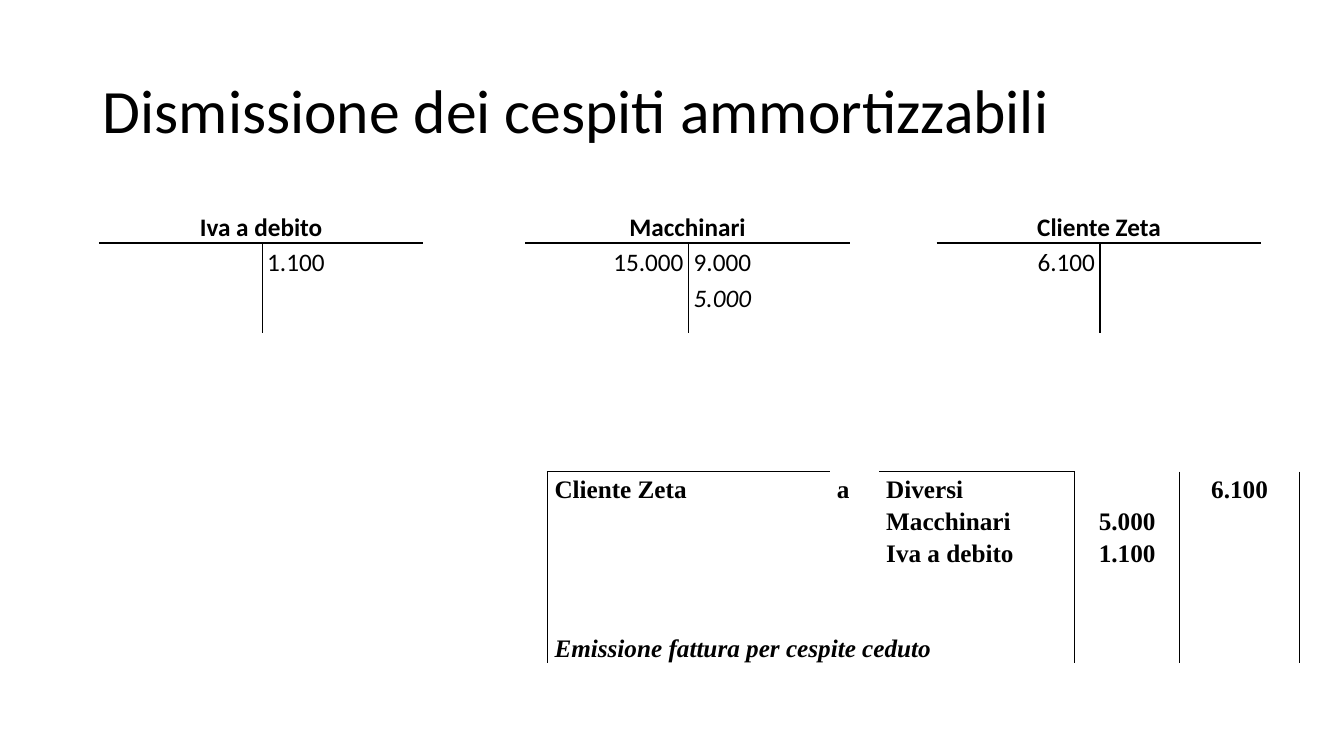
from pptx import Presentation
from pptx.dml.color import RGBColor
from pptx.enum.text import MSO_ANCHOR, PP_ALIGN
from pptx.oxml import parse_xml
from pptx.oxml.ns import nsdecls, qn
from pptx.util import Inches, Pt

BLACK = RGBColor(0x00, 0x00, 0x00)
SANS, SERIF = "Calibri", "Times New Roman"
PLAIN_TABLE = "{2D5ABB26-0587-4C30-8999-92F81FD0307C}"


def write(tf, text, font=SANS, size=18, bold=False, italic=False,
          align=PP_ALIGN.LEFT, spacing=1.15, first=True):
    """Write one paragraph, in the first one or after those already there."""
    p = tf.paragraphs[0] if first else tf.add_paragraph()
    p.alignment, p.line_spacing = align, spacing
    r = p.add_run()
    r.text = text
    r.font.name, r.font.size = font, Pt(size)
    r.font.bold, r.font.italic = bold, italic
    r.font.color.rgb = BLACK


class SlideBuilder:
    def __init__(self, prs):
        self.slide = prs.slides.add_slide(prs.slide_layouts[5])

    def title(self, text):
        sp = self.slide.shapes.title
        sp.left, sp.top = Inches(0.92), Inches(0.4)
        sp.width, sp.height = Inches(11.5), Inches(1.45)
        sp.text_frame.vertical_anchor = MSO_ANCHOR.MIDDLE
        write(sp.text_frame, text, size=44, spacing=0.9)

    def table(self, left, top, cols, rows, inset):
        """Add an unstyled table without fills."""
        table = self.slide.shapes.add_table(
            len(rows), len(cols), Inches(left), Inches(top),
            Inches(sum(cols)), Inches(sum(rows))).table
        table.first_row = table.horz_banding = False
        table._tbl.tblPr.find(qn("a:tableStyleId")).text = PLAIN_TABLE
        for column, width in zip(table.columns, cols):
            column.width = Inches(width)
        for row, height in zip(table.rows, rows):
            row.height = Inches(height)
        for cell in table.iter_cells():
            cell.margin_left = cell.margin_right = Inches(inset)
            cell.margin_top = cell.margin_bottom = 0
            cell.fill.background()
        return table

    def borders(self, cell, sides):
        """Rule the given sides, named in the order L, R, T, B."""
        for i, side in enumerate(sides):
            cell._tc.get_or_add_tcPr().insert(i, parse_xml(
                f'<a:ln{side} {nsdecls("a")} w="{Pt(1)}"><a:solidFill>'
                f'<a:srgbClr val="{BLACK}"/></a:solidFill></a:ln{side}>'))

    def t_account(self, left, name, debits, credits):
        table = self.table(left, 2.06, [1.62, 1.6], [0.33, 0.89], 0.05)
        header = table.cell(0, 0)
        header.merge(table.cell(0, 1))
        write(header.text_frame, name, bold=True, align=PP_ALIGN.CENTER)
        sides = [(debits, PP_ALIGN.RIGHT, "RT"), (credits, PP_ALIGN.LEFT, "LT")]
        for col, (amounts, align, ruled) in enumerate(sides):
            cell = table.cell(1, col)
            self.borders(cell, ruled)
            for i, amount in enumerate(amounts):
                # Every amount after the opening ones is the new entry
                write(cell.text_frame, amount, italic=i > 0, align=align,
                      first=i == 0)

    def journal(self, entry, note):
        table = self.table(5.43, 4.68, [2.8, 0.49, 1.94, 1.04, 1.19],
                           [1.1, 0.48, 0.32], 0.07)
        for row in (1, 2):
            table.cell(row, 0).merge(table.cell(row, 2))
        for row in range(3):
            for col, ruled in ((0, "L"), (3, "L"), (4, "LR")):
                top = "T" if (row, col) == (0, 0) else ""
                self.borders(table.cell(row, col), ruled + top)
        self.borders(table.cell(0, 2), "T")
        for col, lines in enumerate(entry):
            align = PP_ALIGN.CENTER if col > 2 else PP_ALIGN.LEFT
            for i, line in enumerate(lines):
                write(table.cell(0, col).text_frame, line, font=SERIF,
                      bold=True, align=align, first=i == 0)
        # Partial amounts start level with the second account line
        table.cell(0, 3).margin_top = Inches(0.32)
        write(table.cell(2, 0).text_frame, note, font=SERIF, bold=True,
              italic=True)


def main():
    prs = Presentation()
    prs.slide_width, prs.slide_height = Inches(13.33), Inches(7.5)
    s = SlideBuilder(prs)
    s.title("Dismissione dei cespiti ammortizzabili")

    # Journal entry
    s.journal([["Cliente Zeta"], ["a"],
               ["Diversi", "Macchinari", "Iva a debito"],
               ["5.000", "1.100"], ["6.100"]],
              "Emissione fattura per cespite ceduto")

    # Ledger accounts
    s.t_account(0.98, "Iva a debito", [], ["1.100"])
    s.t_account(5.21, "Macchinari", ["15.000"], ["9.000", "5.000"])
    s.t_account(9.29, "Cliente Zeta", ["6.100"], [])

    prs.save("out.pptx")


if __name__ == "__main__":
    main()
